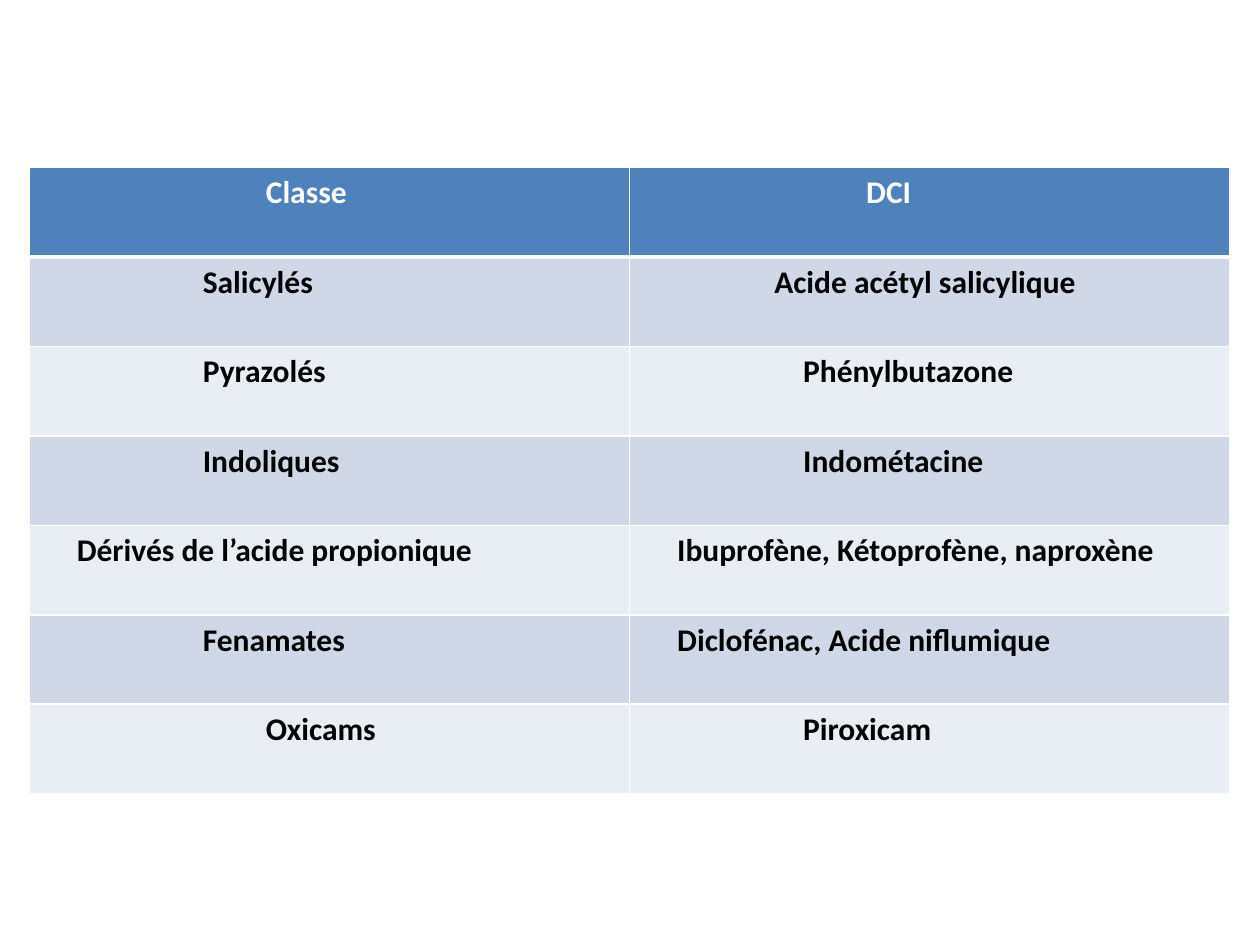
import pptx
import pptx.util
import pptx.dml.color
import pptx.oxml
import pptx.oxml.ns
import lxml.etree

Inches = pptx.util.Inches
ROWS = [
    (("Classe", 1.88), ("DCI", 1.88)),
    (("Salicylés", 1.38), ("Acide acétyl salicylique", 1.15)),
    (("Pyrazolés", 1.38), ("Phénylbutazone", 1.38)),
    (("Indoliques", 1.38), ("Indométacine", 1.38)),
    (("Dérivés de l’acide propionique", 0.38), ("Ibuprofène, Kétoprofène, naproxène", 0.38)),
    (("Fenamates", 1.38), ("Diclofénac, Acide niflumique", 0.38)),
    (("Oxicams", 1.88), ("Piroxicam", 1.38)),
]
FONT = {"name": "Calibri", "size": pptx.util.Pt(18), "bold": True}
HEAD = "4F81BD"
BANDS = ("E9EDF4", "D0D8E8")
WHITE = "FFFFFF"


def color(code):
    """Turn a hex string into a colour."""
    return pptx.dml.color.RGBColor.from_string(code)


def edge(cell, side, width):
    """Draw a white line on one side of a cell."""
    qn = pptx.oxml.ns.qn
    line = lxml.etree.SubElement(cell._tc.get_or_add_tcPr(), qn(f"a:ln{side}"), w=str(pptx.util.Pt(width)))
    fill = lxml.etree.SubElement(line, qn("a:solidFill"))
    lxml.etree.SubElement(fill, qn("a:srgbClr"), val=WHITE)


def style(item, form):
    """Set each format value on an item."""
    for name, value in form.items():
        setattr(item, name, value)


def write(cell, text, left, row):
    """Fill a cell with its text, colours and borders."""
    for side in "LRTB":
        heavy = (side, row) in (("B", 0), ("T", 1))
        edge(cell, side, 3 if heavy else 1)
    cell.fill.solid()
    cell.fill.fore_color.rgb = color(BANDS[row % 2] if row else HEAD)
    style(cell, {"margin_left": Inches(left), "margin_right": 0})
    run = cell.text_frame.paragraphs[0].add_run()
    run.text = text
    style(run.font, FONT)
    run.font.color.rgb = color("000000" if row else WHITE)


def grid(slide):
    """Add the table of drug classes and their generic names."""
    frame = slide.shapes.add_table(
        len(ROWS), 2, Inches(0.23), Inches(1.33), Inches(9.53), Inches(0.71 * len(ROWS)))
    for row, pair in enumerate(ROWS):
        for col, (text, left) in enumerate(pair):
            write(frame.table.cell(row, col), text, left, row)


def main():
    """Build and save the slide."""
    deck = pptx.Presentation()
    style(deck, {"slide_width": Inches(10), "slide_height": Inches(7.5)})
    grid(deck.slides.add_slide(deck.slide_layouts[6]))
    deck.save("out.pptx")


if __name__ == "__main__":
    main()
